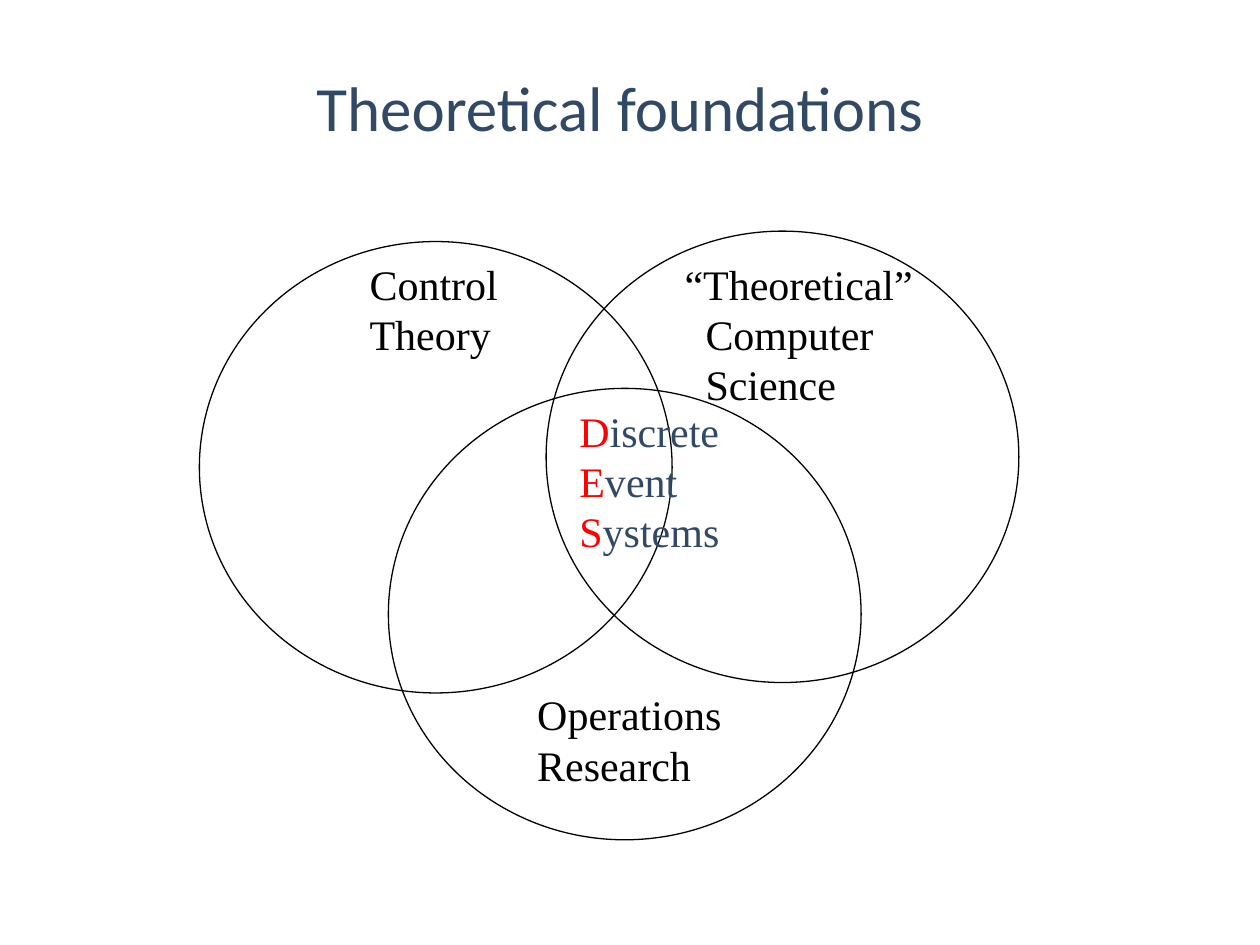
from dataclasses import dataclass

import pptx
import pptx.dml.color
import pptx.enum.shapes
import pptx.enum.text
import pptx.slide
import pptx.util
from pptx.util import Cm


@dataclass(frozen=True)
class Theme:
    title_font: str = "Calibri"
    label_font: str = "Times New Roman"
    title_size: int = 36
    label_size: int = 24
    navy: str = "324966"
    black: str = "000000"
    red: str = "FF0000"
    outline_width: float = 0.75


@dataclass(frozen=True)
class Field:
    """One circle of the Venn diagram, placed by its top left corner in cm."""
    left: float
    top: float


@dataclass(frozen=True)
class Label:
    """Lines of text; the first `initials` letters of each line are red."""
    left: float
    top: float
    width: float
    height: float
    lines: tuple[str, ...]
    color: str
    initials: int = 0
    indent_after_first: int = 0


THEME = Theme()
CIRCLE_WIDTH, CIRCLE_HEIGHT = Cm(9.53), Cm(9.1)

FIELDS = (
    Field(4.02, 4.87),
    Field(7.83, 7.83),
    Field(11.01, 4.66),
)

LABELS = (
    Label(7.2, 5.08, 3.1, 2.29, ("Control", "Theory"), THEME.black),
    Label(13.55, 5.08, 5.1, 3.3, ("“Theoretical”", "Computer", "Science"),
          THEME.black, indent_after_first=12),
    Label(10.58, 13.76, 4.22, 2.29, ("Operations", "Research"), THEME.black),
    Label(11.43, 8.04, 3.33, 3.3, ("Discrete", "Event", "Systems"),
          THEME.navy, initials=1),
)


def apply_format(target: object, values: dict[str, object]) -> None:
    for name, value in values.items():
        setattr(target, name, value)


def add_run(paragraph, text: str, font: str, size: int, color: str) -> None:
    run = paragraph.add_run()
    run.text = text
    apply_format(run.font, {"name": font, "size": pptx.util.Pt(size)})
    run.font.color.rgb = pptx.dml.color.RGBColor.from_string(color)


def fill_title(slide: pptx.slide.Slide, text: str) -> None:
    title = slide.shapes.title
    apply_format(title, {"left": Cm(1.7), "top": Cm(0.64),
                         "width": Cm(21.59), "height": Cm(3.18)})
    title.text_frame.vertical_anchor = pptx.enum.text.MSO_ANCHOR.MIDDLE
    heading = title.text_frame.paragraphs[0]
    apply_format(heading, {"alignment": pptx.enum.text.PP_ALIGN.CENTER,
                           "line_spacing": 0.9})
    add_run(heading, text, THEME.title_font, THEME.title_size, THEME.navy)


def draw_field(slide: pptx.slide.Slide, field: Field) -> None:
    circle = slide.shapes.add_shape(
        pptx.enum.shapes.MSO_SHAPE.OVAL,
        Cm(field.left), Cm(field.top), CIRCLE_WIDTH, CIRCLE_HEIGHT)
    circle.shadow.inherit = False
    circle.fill.background()
    circle.line.width = pptx.util.Pt(THEME.outline_width)
    circle.line.color.rgb = pptx.dml.color.RGBColor.from_string(THEME.black)


def draw_label(slide: pptx.slide.Slide, label: Label) -> None:
    frame = slide.shapes.add_textbox(
        Cm(label.left), Cm(label.top), Cm(label.width), Cm(label.height)).text_frame
    # A fixed width with no right inset leaves slack for the longest line
    apply_format(frame, {
        "word_wrap": True,
        "margin_right": 0,
        "auto_size": pptx.enum.text.MSO_AUTO_SIZE.SHAPE_TO_FIT_TEXT,
    })
    for index, line in enumerate(label.lines):
        paragraph = frame.paragraphs[0] if index == 0 else frame.add_paragraph()
        if index and label.indent_after_first:
            # python-pptx has no public setter for the left margin
            margin = pptx.util.Pt(label.indent_after_first)
            paragraph._p.get_or_add_pPr().set("marL", str(int(margin)))
        parts = ((line[:label.initials], THEME.red),
                 (line[label.initials:], label.color))
        for text, color in parts:
            if text:
                add_run(paragraph, text, THEME.label_font, THEME.label_size, color)


def main() -> None:
    deck = pptx.Presentation()
    apply_format(deck, {"slide_width": Cm(25.4), "slide_height": Cm(19.05)})
    slide = deck.slides.add_slide(deck.slide_layouts.get_by_name("Title Only"))

    # Heading
    fill_title(slide, "Theoretical foundations")
    # Overlapping fields
    for field in FIELDS:
        draw_field(slide, field)
    # Field names and their common core
    for label in LABELS:
        draw_label(slide, label)

    deck.save("out.pptx")


if __name__ == "__main__":
    main()
